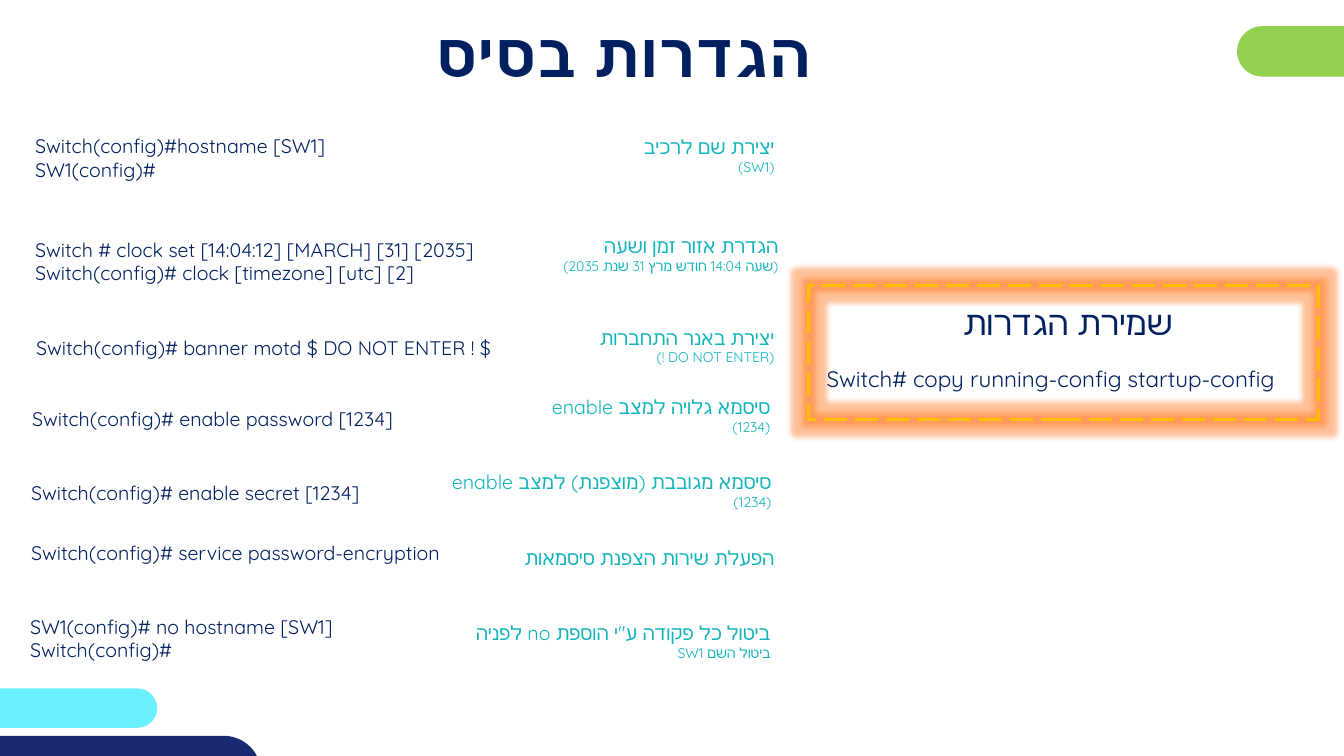
from dataclasses import dataclass

from lxml.etree import SubElement
from pptx import Presentation
from pptx.dml.color import RGBColor
from pptx.enum.dml import MSO_LINE
from pptx.enum.shapes import MSO_SHAPE
from pptx.enum.text import MSO_ANCHOR, MSO_AUTO_SIZE, PP_ALIGN
from pptx.oxml.ns import qn
from pptx.util import Pt

TITLE = "הגדרות בסיס"
# (left, top, width, lines) of the label, then of the command
ROWS = [
    ((623, 129, 155, ["יצירת שם לרכיב", "(SW1)"]),
     (25, 128, 321, ["Switch(config)#hostname [SW1]", "SW1(config)#"])),
    ((528, 227, 254, ["הגדרת אזור זמן ושעה", "(שעה 14:04 חודש מרץ 31 שנת 2035)"]),
     (25, 231, 491, ["Switch # clock set [14:04:12] [MARCH] [31] [2035]",
                     "Switch(config)# clock [timezone] [utc] [2]"])),
    ((575, 318, 203, ["יצירת באנר התחברות", "(DO NOT ENTER !)"]),
     (26, 328, 494, ["Switch(config)# banner motd $ DO NOT ENTER ! $"])),
    ((528, 387, 246, ["סיסמא גלויה למצב enable", "(1234)"]),
     (22, 399, 396, ["Switch(config)# enable password [1234]"])),
    ((423, 461, 352, ["סיסמא מגובבת (מוצפנת) למצב enable", "(1234)"]),
     (21, 472, 364, ["Switch(config)# enable secret [1234]"])),
    ((497, 537, 281, ["הפעלת שירות הצפנת סיסמאות"]),
     (21, 532, 440, ["Switch(config)# service password-encryption"])),
    ((448, 611, 326, ['ביטול כל פקודה ע"י הוספת no לפניה', "ביטול השם SW1"]),
     (20, 605, 337, ["SW1(config)# no hostname [SW1]", "Switch(config)#"])),
]
SAVE_HEAD = (937, 295, 236, ["שמירת הגדרות"])
SAVE_CODE = (810, 357, 489, ["Switch# copy running-config startup-config"])
FRAME = (802, 283, 506, 133)


@dataclass(frozen=True)
class Theme:
    font: str = "Quicksand"
    navy: str = "002060"
    teal: str = "12B4BC"
    green: str = "92D050"
    cyan: str = "6CF0FF"
    blue: str = "192A72"
    gold: str = "FFC000"
    glow: str = "FF6600"
    title: int = 44
    head: int = 24
    code: int = 16
    text: int = 14
    note: int = 10


THEME = Theme()
PILLS = [
    ((1227, 26, 187, 50), THEME.green),
    ((-37, 683, 193, 39), THEME.cyan),
    ((-54, 730, 313, 74), THEME.blue),
]
PX = 9144  # one hundredth of an inch
PAD = 10
LINE = 1.7  # px of line height per point of type


def scale(*sizes):
    return [round(size * PX) for size in sizes]


def style(para, size, color, align, rtl=False, bold=False):
    para.alignment = align
    if rtl:
        para._p.get_or_add_pPr().set("rtl", "1")
    for run in para.runs:
        font = run.font
        font.name, font.size, font.bold = THEME.font, Pt(size), bold
        font.color.rgb = RGBColor.from_string(color)
        SubElement(run._r.get_or_add_rPr(), qn("a:cs"), typeface=THEME.font)


def add_text(slide, item, sizes, color, rtl=False):
    """Add an unwrapped box, one paragraph a line, as high as its lines."""
    left, top, width, lines = item
    sizes = sizes[:len(lines)]
    high = PAD + LINE * sum(sizes)
    frame = slide.shapes.add_textbox(*scale(left, top, width, high)).text_frame
    frame.word_wrap = False
    frame.auto_size = MSO_AUTO_SIZE.SHAPE_TO_FIT_TEXT
    frame.text = "\n".join(lines)
    align = PP_ALIGN.RIGHT if rtl else PP_ALIGN.LEFT
    for para, size in zip(frame.paragraphs, sizes):
        style(para, size, color, align, rtl)


def add_title(slide):
    title = slide.shapes.title
    title.left, title.top, title.width, title.height = scale(83, 13, 1072, 79)
    frame = title.text_frame
    frame.text = TITLE
    frame.word_wrap = True
    frame.auto_size = MSO_AUTO_SIZE.NONE
    frame.vertical_anchor = MSO_ANCHOR.MIDDLE
    frame.margin_left = frame.margin_right = 4 * PX
    frame.margin_top = frame.margin_bottom = 0
    style(frame.paragraphs[0], THEME.title, THEME.navy, PP_ALIGN.CENTER, True, True)


def add_pill(slide, box, color):
    pill = slide.shapes.add_shape(MSO_SHAPE.ROUNDED_RECTANGLE, *scale(*box))
    pill.adjustments[0] = 0.5
    pill.shadow.inherit = False
    pill.fill.solid()
    pill.fill.fore_color.rgb = RGBColor.from_string(color)
    pill.line.fill.background()


def add_frame(slide):
    """Add the dashed frame with a soft glow around its line."""
    frame = slide.shapes.add_shape(MSO_SHAPE.RECTANGLE, *scale(*FRAME))
    frame.fill.background()
    frame.line.color.rgb = RGBColor.from_string(THEME.gold)
    frame.line.width = Pt(2)
    frame.line.dash_style = MSO_LINE.LONG_DASH
    frame.shadow.inherit = False
    effects = frame._element.spPr.find(qn("a:effectLst"))
    glow = SubElement(effects, qn("a:glow"), rad=str(11 * PX))
    color = SubElement(glow, qn("a:srgbClr"), val=THEME.glow)
    SubElement(color, qn("a:alpha"), val="40000")


def main():
    deck = Presentation()
    deck.slide_width, deck.slide_height = scale(1333, 750)
    slide = deck.slides.add_slide(deck.slide_layouts[5])
    add_title(slide)
    for label, code in ROWS:
        add_text(slide, label, [THEME.text, THEME.note], THEME.teal, rtl=True)
        add_text(slide, code, [THEME.text] * 2, THEME.navy)
    add_text(slide, SAVE_HEAD, [THEME.head], THEME.navy, rtl=True)
    add_text(slide, SAVE_CODE, [THEME.code], THEME.navy)
    add_frame(slide)
    for box, color in PILLS:
        add_pill(slide, box, color)
    deck.save("out.pptx")


if __name__ == "__main__":
    main()
